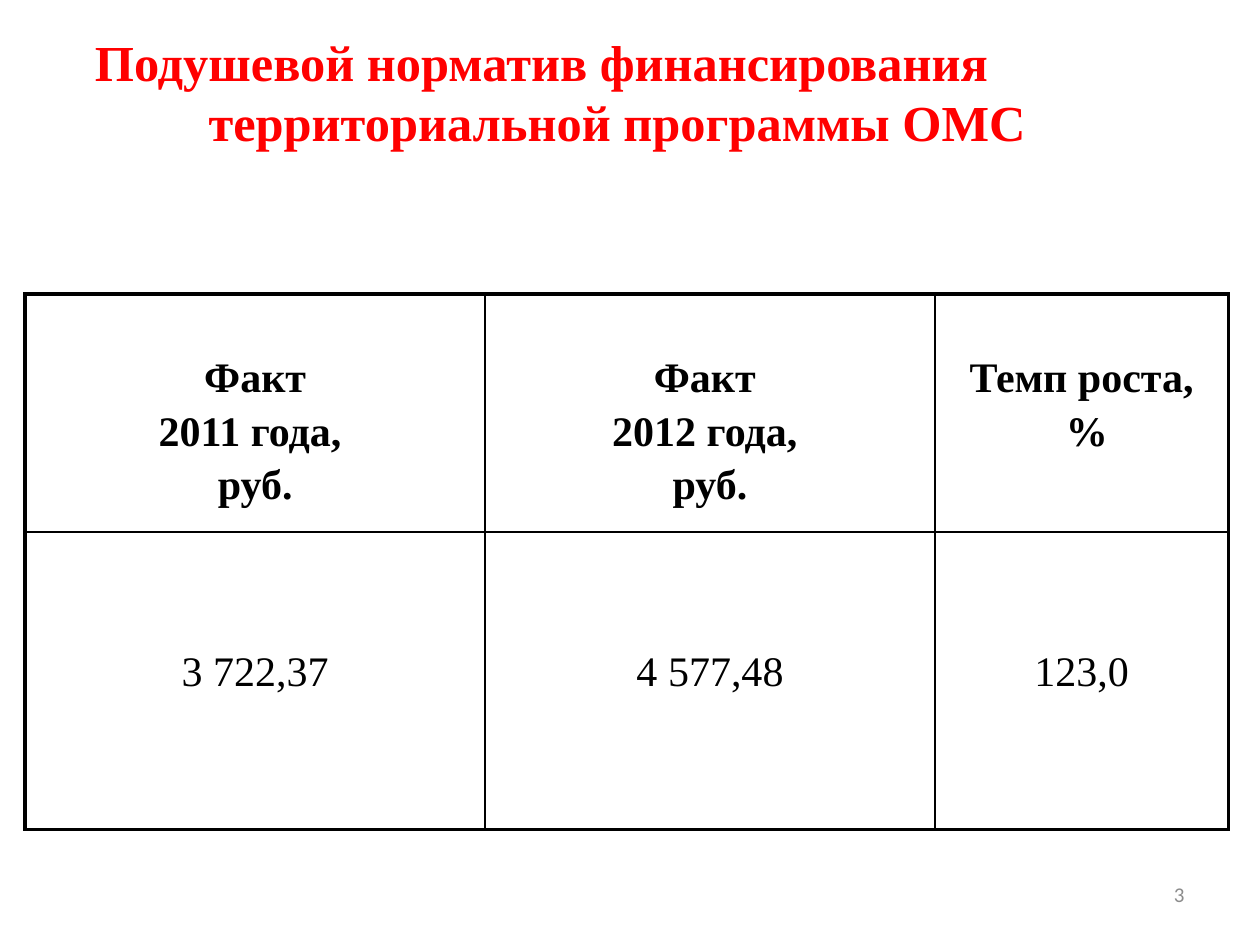
from pptx import Presentation
from pptx.dml.color import RGBColor
from pptx.enum.text import MSO_ANCHOR, MSO_AUTO_SIZE, PP_ALIGN
from pptx.oxml import parse_xml
from pptx.oxml.ns import nsdecls
from pptx.util import Pt

RED = RGBColor(0xFF, 0x00, 0x00)
BLACK = RGBColor(0x00, 0x00, 0x00)
GRAY = RGBColor(0x8C, 0x8C, 0x8C)
SERIF = "Times New Roman"

TITLE_LINES = [("Подушевой норматив финансирования", 11),
               ("территориальной программы ОМС", 76)]
ROWS = [
    [["Факт", "2011 года, ", "руб."],
     ["Факт ", "2012 года, ", "руб."],
     ["Темп роста,", " %"]],
    [["3 722,37"], ["4 577,48"], ["123,0"]],
]
COLUMN_WIDTHS = [262.8, 257, 167.8]
ROW_HEIGHTS = [136, 170]
TOP_MARGINS = [35.2, 66.8]
OUTER_LINE, INNER_LINE = 2.25, 1


def set_font(paragraph, name, size, color, bold=False):
    font = paragraph.font
    font.name, font.size, font.bold = name, Pt(size), bold
    font.color.rgb = color


def add_title(slide):
    title = slide.shapes.title
    title.left, title.top, title.width, title.height = Pt(36), Pt(18), Pt(648), Pt(90)
    frame = title.text_frame
    frame.auto_size = MSO_AUTO_SIZE.NONE
    frame.vertical_anchor = MSO_ANCHOR.TOP
    frame.margin_top = 0
    frame.text = "\n".join(text for text, _ in TITLE_LINES)
    for paragraph, (_, indent) in zip(frame.paragraphs, TITLE_LINES):
        paragraph.alignment = PP_ALIGN.LEFT
        properties = paragraph._p.get_or_add_pPr()
        properties.set("marL", str(Pt(indent)))
        properties.set("indent", "0")
        paragraph.line_spacing = Pt(34.3)
        set_font(paragraph, SERIF, 28.8, RED, bold=True)


def set_borders(cell, widths):
    """Draw the cell's left, right, top and bottom lines, in that order."""
    properties = cell._tc.get_or_add_tcPr()
    for position, (side, width) in enumerate(zip("LRTB", widths)):
        properties.insert(position, parse_xml(
            f'<a:ln{side} {nsdecls("a")} w="{Pt(width)}"><a:solidFill>'
            f'<a:srgbClr val="{BLACK}"/></a:solidFill></a:ln{side}>'))


def fill_cell(cell, lines, top_margin, bold):
    cell.fill.background()
    cell.margin_top = Pt(top_margin)
    frame = cell.text_frame
    frame.text = "\n".join(lines)
    for index, paragraph in enumerate(frame.paragraphs):
        paragraph.alignment = PP_ALIGN.CENTER
        paragraph.space_before = Pt(4 if index else 0)
        set_font(paragraph, SERIF, 24, BLACK, bold)


def add_funding_table(slide):
    row_count, column_count = len(ROWS), len(COLUMN_WIDTHS)
    table = slide.shapes.add_table(
        row_count, column_count, Pt(14.4), Pt(168),
        Pt(sum(COLUMN_WIDTHS)), Pt(sum(ROW_HEIGHTS))).table
    table.first_row = table.horz_banding = False
    for column, width in zip(table.columns, COLUMN_WIDTHS):
        column.width = Pt(width)
    for r, row in enumerate(ROWS):
        table.rows[r].height = Pt(ROW_HEIGHTS[r])
        for c, lines in enumerate(row):
            cell = table.cell(r, c)
            fill_cell(cell, lines, TOP_MARGINS[r], bold=r == 0)
            on_edge = [c == 0, c == column_count - 1, r == 0, r == row_count - 1]
            set_borders(cell, [OUTER_LINE if edge else INNER_LINE for edge in on_edge])


def add_page_number(slide, text):
    box = slide.shapes.add_textbox(Pt(516), Pt(492), Pt(168), Pt(37.5))
    frame = box.text_frame
    frame.word_wrap = True
    frame.vertical_anchor = MSO_ANCHOR.MIDDLE
    frame.text = text
    paragraph = frame.paragraphs[0]
    paragraph.alignment = PP_ALIGN.RIGHT
    set_font(paragraph, "Calibri", 12, GRAY)


def main():
    presentation = Presentation()
    presentation.slide_width, presentation.slide_height = Pt(720), Pt(540)
    slide = presentation.slides.add_slide(presentation.slide_layouts[5])
    add_page_number(slide, "3")
    add_title(slide)
    add_funding_table(slide)
    presentation.save("out.pptx")


if __name__ == "__main__":
    main()
